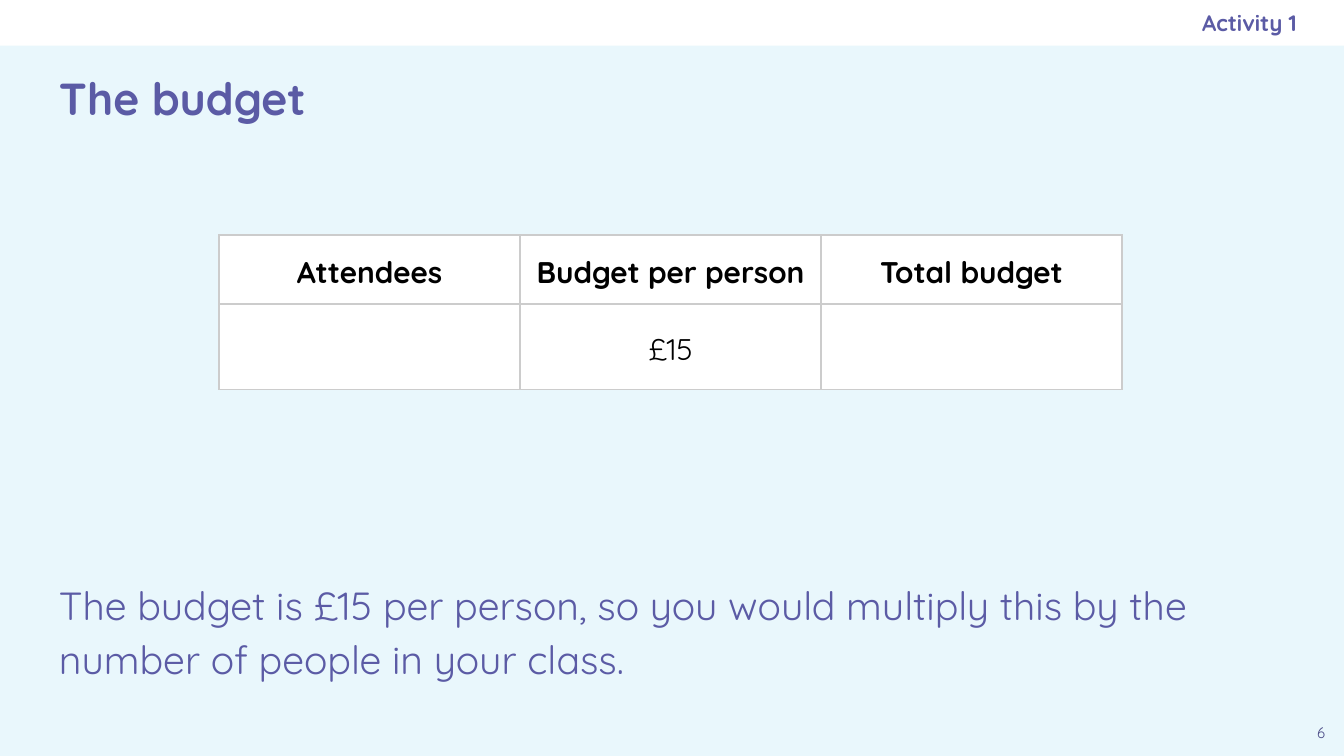
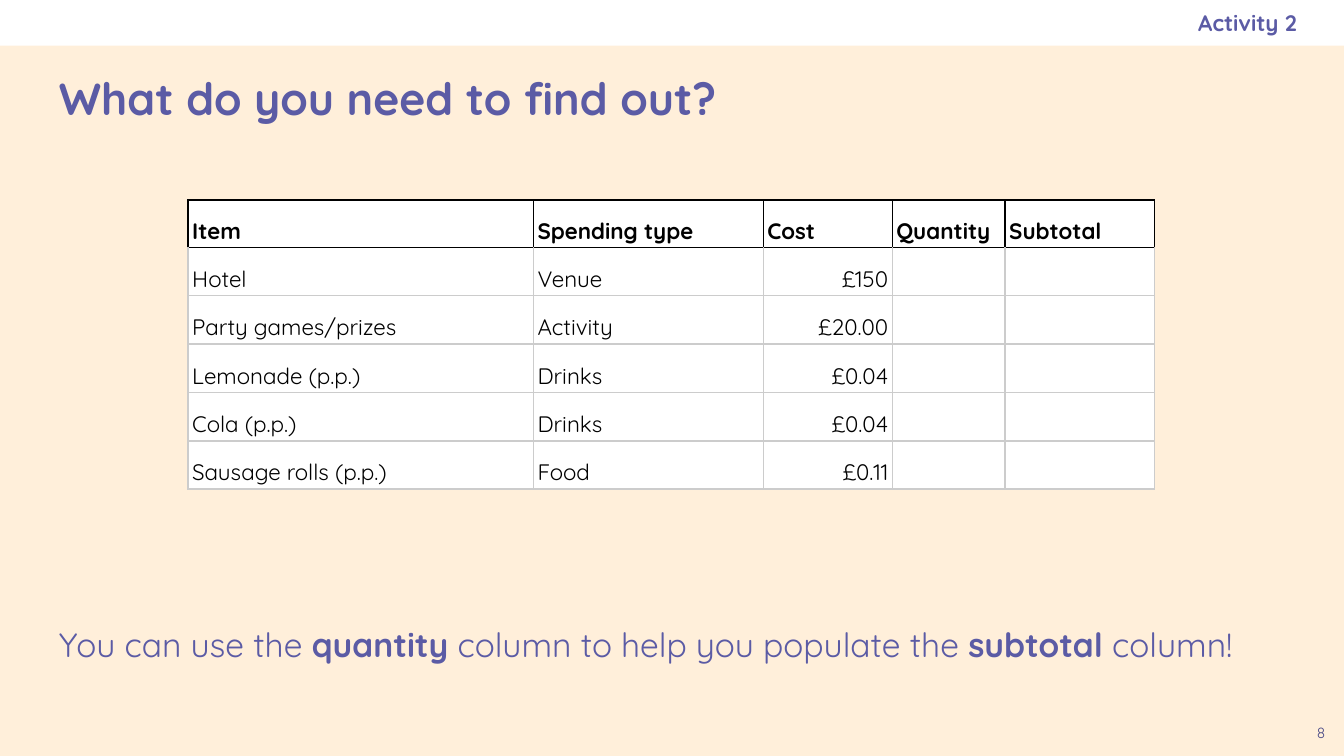
"""Build two party-budget lesson slides, each with a table and a prompt."""
import pptx
import pptx.dml.color
import pptx.enum.shapes
import pptx.enum.text
import pptx.oxml
import pptx.oxml.ns
import pptx.util

Inches = pptx.util.Inches
Align = pptx.enum.text.PP_ALIGN
Anchor = pptx.enum.text.MSO_ANCHOR

FONT = "Quicksand"
PURPLE, NUMBER_PURPLE = "5B5BA5", "494985"
WHITE, BLACK, GREY = "FFFFFF", "000000", "CCCCCC"
BAND_HEIGHT = 0.34
LEFT, CONTENT_WIDTH = 0.34, 9.32


def color(hex_string):
    return pptx.dml.color.RGBColor.from_string(hex_string)


def write(frame, text, size, fill=PURPLE, bold=False, align=Align.LEFT, spacing=None, after=0):
    """Write one paragraph; words between asterisks are bold."""
    paragraph = frame.paragraphs[0]
    paragraph.alignment = align
    paragraph.line_spacing = spacing
    paragraph.space_after = pptx.util.Pt(after)
    for index, part in enumerate(text.split("*")):
        run = paragraph.add_run()
        run.text = part
        run.font.name = FONT
        run.font.size = pptx.util.Pt(size)
        run.font.bold = bold or index % 2 == 1
        run.font.color.rgb = color(fill)


lessons = [
    dict(
        background="E9F7FC", number="6", activity="Activity 1", title="The budget",
        prompt="The budget is £15 per person, so you would multiply this by the number of people in your class.",
        prompt_top=4.17, prompt_height=1.1, prompt_size=21,
        table_left=1.63, table_top=1.75, table_size=16, anchor=Anchor.MIDDLE, header_line=GREY,
        column_widths=[2.24] * 3, row_heights=[0.51, 0.64],
        header_align=Align.CENTER, column_aligns=[Align.CENTER] * 3,
        rows=[
            ["Attendees", "Budget per person", "Total budget"],
            ["", "£15", ""],
        ],
    ),
    dict(
        background="FFEFDA", number="8", activity="Activity 2", title="What do you need to find out?",
        prompt="You can use the *quantity* column to help you populate the *subtotal* column!",
        prompt_top=4.5, prompt_height=0.76, prompt_size=18,
        table_left=1.4, table_top=1.49, table_size=12, anchor=Anchor.BOTTOM, header_line=BLACK,
        column_widths=[2.57, 1.71, 0.96, 0.84, 1.11], row_heights=[0.35] + [0.36] * 5,
        header_align=Align.LEFT,
        column_aligns=[Align.LEFT, Align.LEFT, Align.RIGHT, Align.LEFT, Align.LEFT],
        rows=[
            ["Item", "Spending type", "Cost", "Quantity", "Subtotal"],
            ["Hotel", "Venue", "£150", "", ""],
            ["Party games/prizes", "Activity", "£20.00", "", ""],
            ["Lemonade (p.p.)", "Drinks", "£0.04", "", ""],
            ["Cola (p.p.)", "Drinks", "£0.04", "", ""],
            ["Sausage rolls (p.p.)", "Food", "£0.11", "", ""],
        ],
    ),
]

presentation = pptx.Presentation()
presentation.slide_width = Inches(10)
presentation.slide_height = presentation.slide_width * 9 // 16

for lesson in lessons:
    slide = presentation.slides.add_slide(presentation.slide_layouts[6])
    slide.background.fill.solid()
    slide.background.fill.fore_color.rgb = color(lesson["background"])

    band = slide.shapes.add_shape(
        pptx.enum.shapes.MSO_SHAPE.RECTANGLE, 0, 0, presentation.slide_width, Inches(BAND_HEIGHT)
    )
    band.shadow.inherit = False
    band.fill.solid()
    band.fill.fore_color.rgb = color(WHITE)
    band.line.fill.background()

    text_boxes = [
        ((9.66, 5.28, 0.34, 0.34), 0.1, Anchor.MIDDLE, lesson["number"],
         dict(size=8, fill=NUMBER_PURPLE, align=Align.CENTER)),
        ((5.75, 0, 3.9, BAND_HEIGHT), 0, Anchor.MIDDLE, lesson["activity"],
         dict(size=12, bold=True, align=Align.RIGHT)),
        ((LEFT, 0.35, CONTENT_WIDTH, 0.76), 0.1, Anchor.MIDDLE, lesson["title"],
         dict(size=24, bold=True)),
        ((LEFT, lesson["prompt_top"], CONTENT_WIDTH, lesson["prompt_height"]), 0.1, Anchor.TOP,
         lesson["prompt"], dict(size=lesson["prompt_size"], spacing=1.15, after=16)),
    ]
    for place, right_margin, anchor, text, text_format in text_boxes:
        frame = slide.shapes.add_textbox(*map(Inches, place)).text_frame
        frame.word_wrap = True
        frame.vertical_anchor = anchor
        frame.margin_left = frame.margin_top = frame.margin_bottom = Inches(0.1)
        frame.margin_right = Inches(right_margin)
        write(frame, text, **text_format)

    rows, widths, heights = lesson["rows"], lesson["column_widths"], lesson["row_heights"]
    table = slide.shapes.add_table(
        len(rows), len(widths), Inches(lesson["table_left"]), Inches(lesson["table_top"]),
        Inches(sum(widths)), Inches(sum(heights)),
    ).table
    table.first_row = table.horz_banding = False
    for column, width in zip(table.columns, widths):
        column.width = Inches(width)
    for row, height in zip(table.rows, heights):
        row.height = Inches(height)

    for row_index, texts in enumerate(rows):
        is_header = row_index == 0
        for column_index, text in enumerate(texts):
            cell = table.cell(row_index, column_index)
            cell.vertical_anchor = lesson["anchor"]
            cell.margin_left = cell.margin_right = Inches(0.03)
            cell.margin_top = cell.margin_bottom = Inches(0.02)
            cell.fill.solid()
            cell.fill.fore_color.rgb = color(WHITE)
            if text:
                align = lesson["header_align"] if is_header else lesson["column_aligns"][column_index]
                write(cell.text_frame, text, lesson["table_size"], fill=BLACK,
                      bold=is_header, align=align, spacing=1.15)
            properties = cell._tc.get_or_add_tcPr()
            for position, side in enumerate("LRTB"):
                touches_header = is_header or (row_index == 1 and side == "T")
                line_color = lesson["header_line"] if touches_header else GREY
                properties.insert(position, pptx.oxml.parse_xml(
                    f'<a:ln{side} {pptx.oxml.ns.nsdecls("a")} w="{pptx.util.Pt(1)}">'
                    f'<a:solidFill><a:srgbClr val="{line_color}"/></a:solidFill></a:ln{side}>'
                ))

presentation.save("out.pptx")
